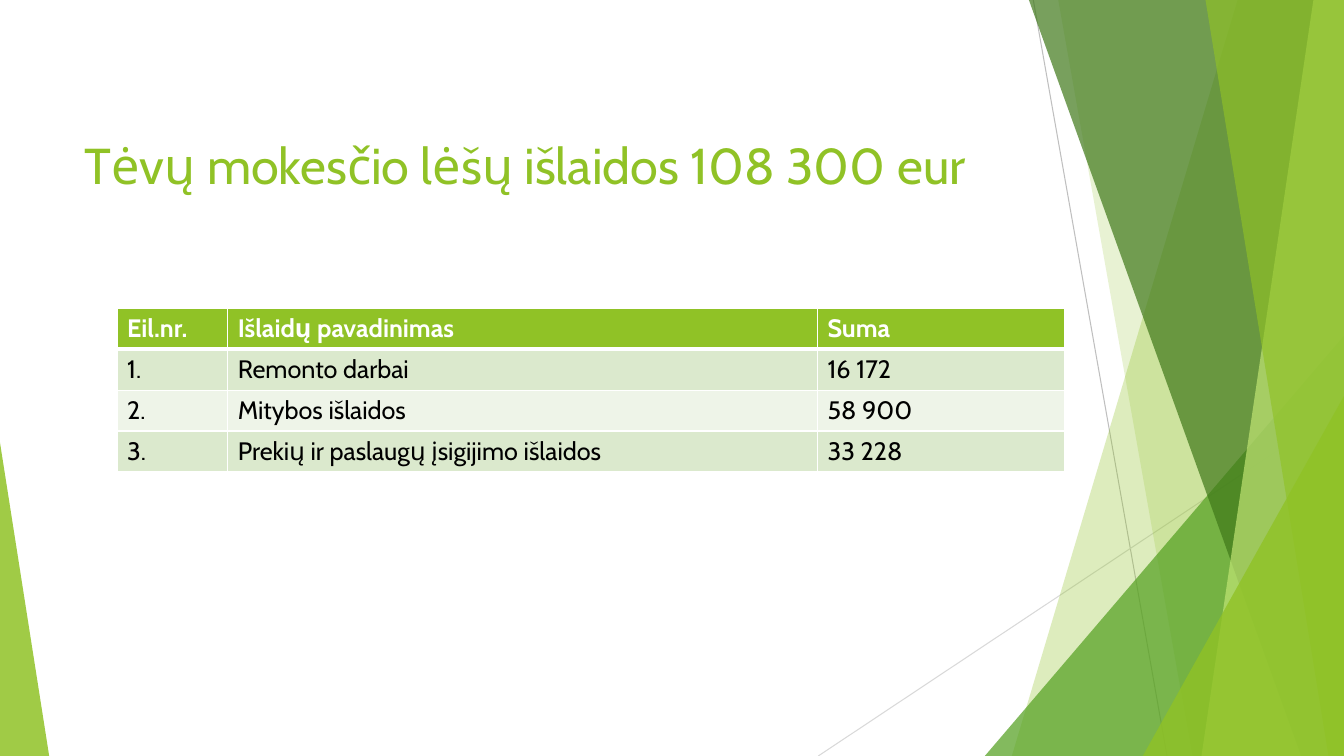
import pptx
import pptx.dml.color
import pptx.enum.shapes
import pptx.enum.text
import pptx.oxml.ns
import pptx.oxml.xmlchemy
import pptx.util
from pptx.util import Cm

WIDTH, HEIGHT = 33.87, 19.05
FONT = "Cabin"
COLORS = {
    "lime": "90C226",
    "pale lime": "C0E474",
    "green": "54A021",
    "dark green": "3F7819",
    "gray": "BFBFBF",
    "light gray": "D9D9D9",
    "odd row": "DBE9CD",
    "even row": "EEF4E8",
    "white": "FFFFFF",
    "black": "000000",
}
EXPENSES = [
    ("Eil.nr.", "Išlaidų pavadinimas", "Suma"),
    ("1.", "Remonto darbai", "16 172"),
    ("2.", "Mitybos išlaidos", "58 900"),
    ("3.", "Prekių ir paslaugų įsigijimo išlaidos", "33 228"),
]


def rgb(color):
    return pptx.dml.color.RGBColor.from_string(COLORS[color])


def add_element(parent, tag, **attributes):
    element = pptx.oxml.xmlchemy.OxmlElement(tag)
    for key, value in attributes.items():
        element.set(key, str(value))
    parent.append(element)
    return element


def paint(facet, color, opacity):
    facet.shadow.inherit = False
    facet.line.fill.background()
    facet.fill.solid()
    facet.fill.fore_color.rgb = rgb(color)
    tint = facet._element.spPr.find(".//" + pptx.oxml.ns.qn("a:srgbClr"))
    add_element(tint, "a:alpha", val=opacity * 1000)


def add_ray(slide, start, end, color):
    ray = slide.shapes.add_connector(
        pptx.enum.shapes.MSO_CONNECTOR.STRAIGHT, *map(Cm, start + end))
    ray.line.color.rgb = rgb(color)
    ray.line.width = pptx.util.Pt(0.75)
    add_element(ray._element.spPr, "a:effectLst")


def add_band(slide, top_left, bottom_left, color, opacity):
    outline = slide.shapes.build_freeform(Cm(top_left), 0)
    corners = [(WIDTH, 0), (WIDTH, HEIGHT), (bottom_left, HEIGHT)]
    outline.add_line_segments([(Cm(x), Cm(y)) for x, y in corners])
    paint(outline.convert_to_shape(), color, opacity)


def add_wedge(slide, left, top, width, apex, color, opacity):
    wedge = slide.shapes.add_shape(
        pptx.enum.shapes.MSO_SHAPE.ISOSCELES_TRIANGLE,
        Cm(left), Cm(top), Cm(width), Cm(HEIGHT - top))
    wedge.adjustments[0] = apex
    paint(wedge, color, opacity)


def format_text(paragraph, size, color, bold=False):
    paragraph.alignment = pptx.enum.text.PP_ALIGN.LEFT
    paragraph.font.name = FONT
    paragraph.font.size = pptx.util.Pt(size)
    paragraph.font.bold = bold
    paragraph.font.color.rgb = rgb(color)


def add_title(slide, text):
    title = slide.shapes.title
    title.left, title.top, title.width, title.height = map(
        Cm, (1.88, 1.7, 23.88, 3.66))
    frame = title.text_frame
    frame.text = text
    frame.word_wrap = True
    frame.auto_size = pptx.enum.text.MSO_AUTO_SIZE.NONE
    frame.vertical_anchor = pptx.enum.text.MSO_ANCHOR.TOP
    frame.margin_top = Cm(1.68)
    format_text(frame.paragraphs[0], 36, "lime")


def add_borders(cell, bottom, top):
    properties = cell._tc.get_or_add_tcPr()
    for side, points in (("L", 1), ("R", 1), ("T", top), ("B", bottom)):
        border = add_element(properties, "a:ln" + side, w=pptx.util.Pt(points))
        fill = add_element(border, "a:solidFill")
        add_element(fill, "a:srgbClr", val=COLORS["white"])


def add_expense_table(slide):
    row_height = 1.03
    expenses = slide.shapes.add_table(
        len(EXPENSES), 3, Cm(2.95), Cm(7.77),
        Cm(23.88), Cm(row_height * len(EXPENSES))).table
    for column, width in zip(expenses.columns, (2.79, 14.86, 6.23)):
        column.width = Cm(width)
    for r, entries in enumerate(EXPENSES):
        header = r == 0
        background = "lime" if header else ("odd row" if r % 2 else "even row")
        for c, text in enumerate(entries):
            cell = expenses.cell(r, c)
            cell.text = text
            add_borders(cell, 3 if header else 1, 3 if r == 1 else 1)
            cell.fill.solid()
            cell.fill.fore_color.rgb = rgb(background)
            format_text(cell.text_frame.paragraphs[0], 18,
                        "white" if header else "black", header)


def add_decoration(slide):
    add_ray(slide, (26.04, 0), (29.41, HEIGHT), "gray")
    add_ray(slide, (WIDTH, 10.24), (20.62, HEIGHT), "light gray")
    add_band(slide, 31.19, 25.5, "lime", 30)
    add_band(slide, 26.67, 30.05, "lime", 20)
    add_wedge(slide, 24.82, 8.46, 9.05, 1, "green", 72)
    add_band(slide, 25.93, 32.79, "dark green", 70)
    add_band(slide, 33.1, 30.28, "pale lime", 70)
    add_band(slide, 30.38, 33.48, "lime", 65)
    add_wedge(slide, 28.8, 9.98, 5.07, 1, "lime", 80)
    add_wedge(slide, 0, 11.15, 1.24, 0, "lime", 85)


def main():
    presentation = pptx.Presentation()
    presentation.slide_width = Cm(WIDTH)
    presentation.slide_height = Cm(HEIGHT)
    slide = presentation.slides.add_slide(presentation.slide_layouts[5])
    add_decoration(slide)
    add_title(slide, "Tėvų mokesčio lėšų išlaidos 108 300 eur")
    add_expense_table(slide)
    presentation.save("out.pptx")


if __name__ == "__main__":
    main()
